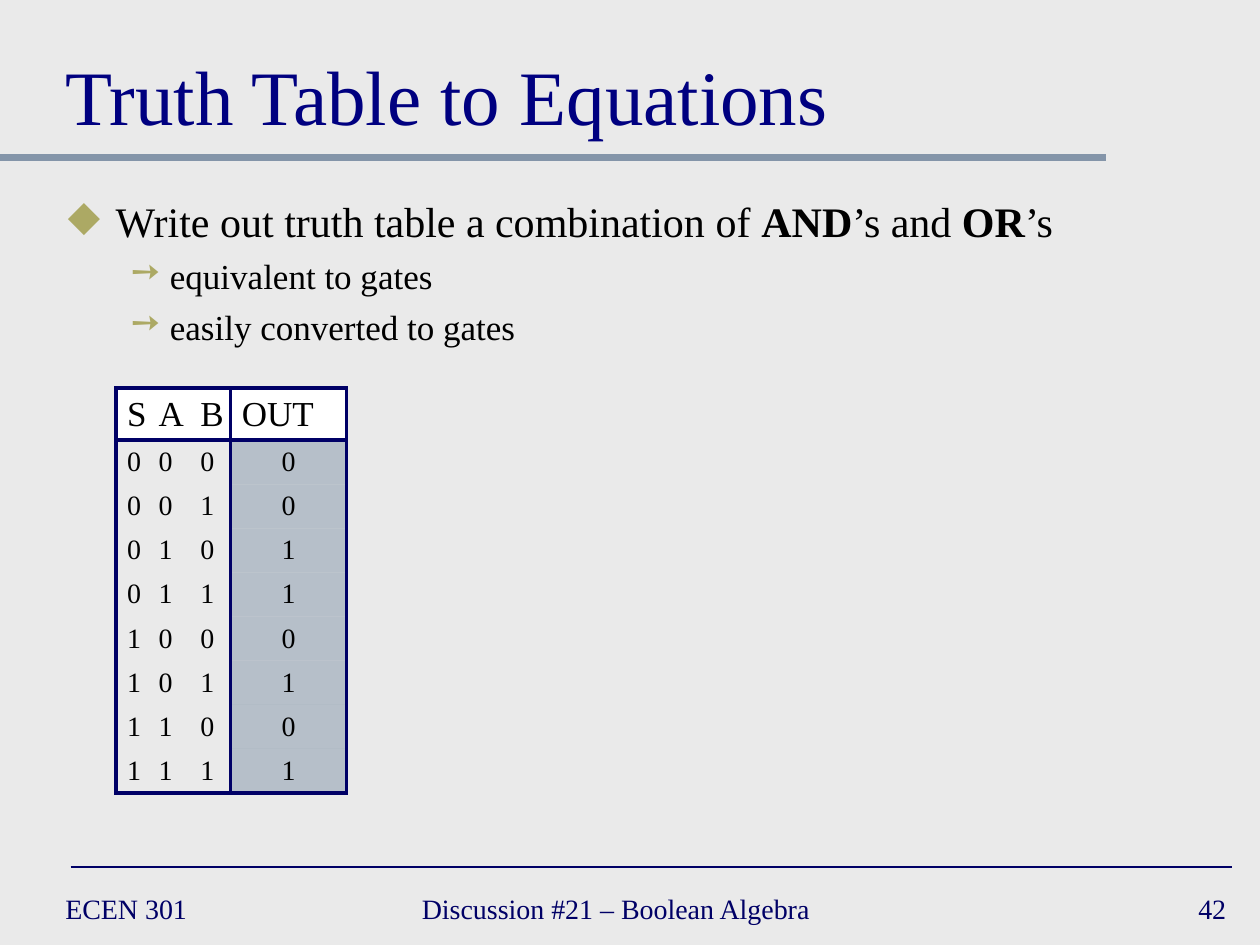
from dataclasses import dataclass

from lxml.etree import SubElement
from pptx import Presentation
from pptx.dml.color import RGBColor
from pptx.enum.shapes import MSO_CONNECTOR
from pptx.enum.text import MSO_ANCHOR, PP_ALIGN
from pptx.oxml.ns import qn
from pptx.util import Inches, Pt


@dataclass(frozen=True)
class Theme:
    font: str = "Times New Roman"
    background: str = "EAEAEA"
    title: str = "000080"
    navy: str = "000066"
    slate: str = "8495A9"
    bullet: str = "ACA964"
    ink: str = "000000"
    header: str = "FFFFFF"
    title_size: int = 44
    body_size: int = 24
    sub_size: int = 20
    small_size: int = 16
    border: float = 2.25


@dataclass(frozen=True)
class Rule:
    left: float
    right: float
    y: float
    color: str
    weight: float


@dataclass(frozen=True)
class Label:
    text: str
    left: float
    top: float
    width: float
    height: float
    size: int
    color: str
    anchor: MSO_ANCHOR = MSO_ANCHOR.MIDDLE
    align: PP_ALIGN = PP_ALIGN.LEFT


@dataclass(frozen=True)
class Point:
    phrases: tuple[str, ...]
    symbol: str
    size: int
    margin: float
    hang: float
    before: float


THEME = Theme()
RULES = (
    Rule(0, 8.78, 1.25, THEME.slate, 4),
    Rule(0.56, 9.78, 6.88, THEME.navy, 1),
)
LABELS = (
    Label("ECEN 301", 0.42, 7, 2.17, 0.42, THEME.small_size, THEME.navy),
    Label("Discussion #21 – Boolean Algebra", 3.25, 7, 3.83, 0.42,
          THEME.small_size, THEME.navy),
    Label("42", 7.75, 7, 2.08, 0.42, THEME.small_size, THEME.navy,
          align=PP_ALIGN.RIGHT),
    Label("Truth Table to Equations", 0.42, 0.17, 9.17, 1,
          THEME.title_size, THEME.title, MSO_ANCHOR.BOTTOM),
)
POINTS = (
    Point(("Write out truth table a combination of ", "AND", "’s and", " OR", "’s"),
          "◆", THEME.body_size, 0.38, 0.38, 0),
    Point(("equivalent to gates",), "➙", THEME.sub_size, 0.81, 0.31, 5),
    Point(("easily converted to gates",), "➙", THEME.sub_size, 0.81, 0.31, 5),
)
HEADINGS = ("S", "A", "B", "OUT")
OUTPUTS = "00110101"
COLUMN_WIDTHS = (0.25, 0.33, 0.33, 0.92)
HEADER_HEIGHT, ROW_HEIGHT = 0.41, 0.35


def style(font, size: int, color: str, bold: bool = False) -> None:
    font.name = THEME.font
    font.size = Pt(size)
    font.bold = bold
    font.color.rgb = RGBColor.from_string(color)


def draw_rule(slide, rule: Rule) -> None:
    line = slide.shapes.add_connector(
        MSO_CONNECTOR.STRAIGHT, Inches(rule.left), Inches(rule.y),
        Inches(rule.right), Inches(rule.y))
    line.line.color.rgb = RGBColor.from_string(rule.color)
    line.line.width = Pt(rule.weight)
    SubElement(line._element.spPr, qn("a:effectLst"))


def draw_label(slide, label: Label) -> None:
    box = slide.shapes.add_textbox(Inches(label.left), Inches(label.top),
                                   Inches(label.width), Inches(label.height))
    frame = box.text_frame
    frame.word_wrap = True
    frame.vertical_anchor = label.anchor
    frame.text = label.text
    paragraph = frame.paragraphs[0]
    paragraph.alignment = label.align
    style(paragraph.runs[0].font, label.size, label.color)


def draw_points(slide, points: tuple[Point, ...]) -> None:
    frame = slide.shapes.add_textbox(
        Inches(0.44), Inches(1.5), Inches(9.31), Inches(1.5)).text_frame
    frame.word_wrap = True
    for index, point in enumerate(points):
        paragraph = frame.add_paragraph() if index else frame.paragraphs[0]
        properties = paragraph._p.get_or_add_pPr()
        properties.set("marL", str(Inches(point.margin)))
        properties.set("indent", str(-Inches(point.hang)))
        tint = SubElement(properties, qn("a:buClr"))
        SubElement(tint, qn("a:srgbClr"), val=THEME.bullet)
        SubElement(properties, qn("a:buChar"), char=point.symbol)
        paragraph.level = 1 if index else 0
        paragraph.space_before = Pt(point.before)
        for position, phrase in enumerate(point.phrases):
            run = paragraph.add_run()
            run.text = phrase
            style(run.font, point.size, THEME.ink, bold=position % 2 == 1)


def set_borders(cell, sides: set[str]) -> None:
    properties = cell._tc.get_or_add_tcPr()
    for position, side in enumerate("LRTB"):
        edge = properties.makeelement(qn(f"a:ln{side}"), {})
        properties.insert(position, edge)
        if side in sides:
            edge.set("w", str(Pt(THEME.border)))
            fill = SubElement(edge, qn("a:solidFill"))
            SubElement(fill, qn("a:srgbClr"), val=THEME.navy)
        else:
            SubElement(edge, qn("a:noFill"))


def fill_cell(cell, row: int, column: int) -> None:
    if row == 0:
        cell.fill.solid()
        cell.fill.fore_color.rgb = RGBColor.from_string(THEME.header)
    elif column == 3:
        cell.fill.solid()
        cell.fill.fore_color.rgb = RGBColor.from_string(THEME.slate)
        color = cell._tc.tcPr.find(f".//{qn('a:srgbClr')}")
        SubElement(color, qn("a:alpha"), val="50000")
    else:
        cell.fill.background()


def draw_truth_table(slide) -> None:
    inputs = [f"{value:03b}" for value in range(len(OUTPUTS))]
    rows = [HEADINGS] + [(*bits, out) for bits, out in zip(inputs, OUTPUTS)]
    height = HEADER_HEIGHT + ROW_HEIGHT * len(OUTPUTS)
    table = slide.shapes.add_table(
        len(rows), len(HEADINGS), Inches(0.92), Inches(3.08),
        Inches(sum(COLUMN_WIDTHS)), Inches(height)).table
    table.first_row = table.horz_banding = False
    for column, width in zip(table.columns, COLUMN_WIDTHS):
        column.width = Inches(width)
    for r, values in enumerate(rows):
        table.rows[r].height = Inches(ROW_HEIGHT if r else HEADER_HEIGHT)
        for c, value in enumerate(values):
            cell = table.cell(r, c)
            cell.text = value
            cell.vertical_anchor = MSO_ANCHOR.MIDDLE
            cell.margin_left = Inches(0.09)
            cell.margin_right = Inches(0.09 if c == 3 else 0)
            cell.margin_top = cell.margin_bottom = Inches(0.04)
            paragraph = cell.text_frame.paragraphs[0]
            paragraph.alignment = PP_ALIGN.CENTER if r and c == 3 else PP_ALIGN.LEFT
            style(paragraph.runs[0].font,
                  THEME.small_size if r else THEME.sub_size, THEME.ink)
            fill_cell(cell, r, c)
            drawn = {"L": c in (0, 3), "R": c in (2, 3),
                     "T": r in (0, 1), "B": r in (0, len(OUTPUTS))}
            set_borders(cell, {side for side, shown in drawn.items() if shown})


def main() -> None:
    deck = Presentation()
    deck.slide_width, deck.slide_height = Inches(10), Inches(7.5)
    slide = deck.slides.add_slide(deck.slide_layouts[6])
    slide.background.fill.solid()
    slide.background.fill.fore_color.rgb = RGBColor.from_string(THEME.background)
    for rule in RULES:
        draw_rule(slide, rule)
    for label in LABELS:
        draw_label(slide, label)
    draw_points(slide, POINTS)
    draw_truth_table(slide)
    deck.save("out.pptx")


if __name__ == "__main__":
    main()
